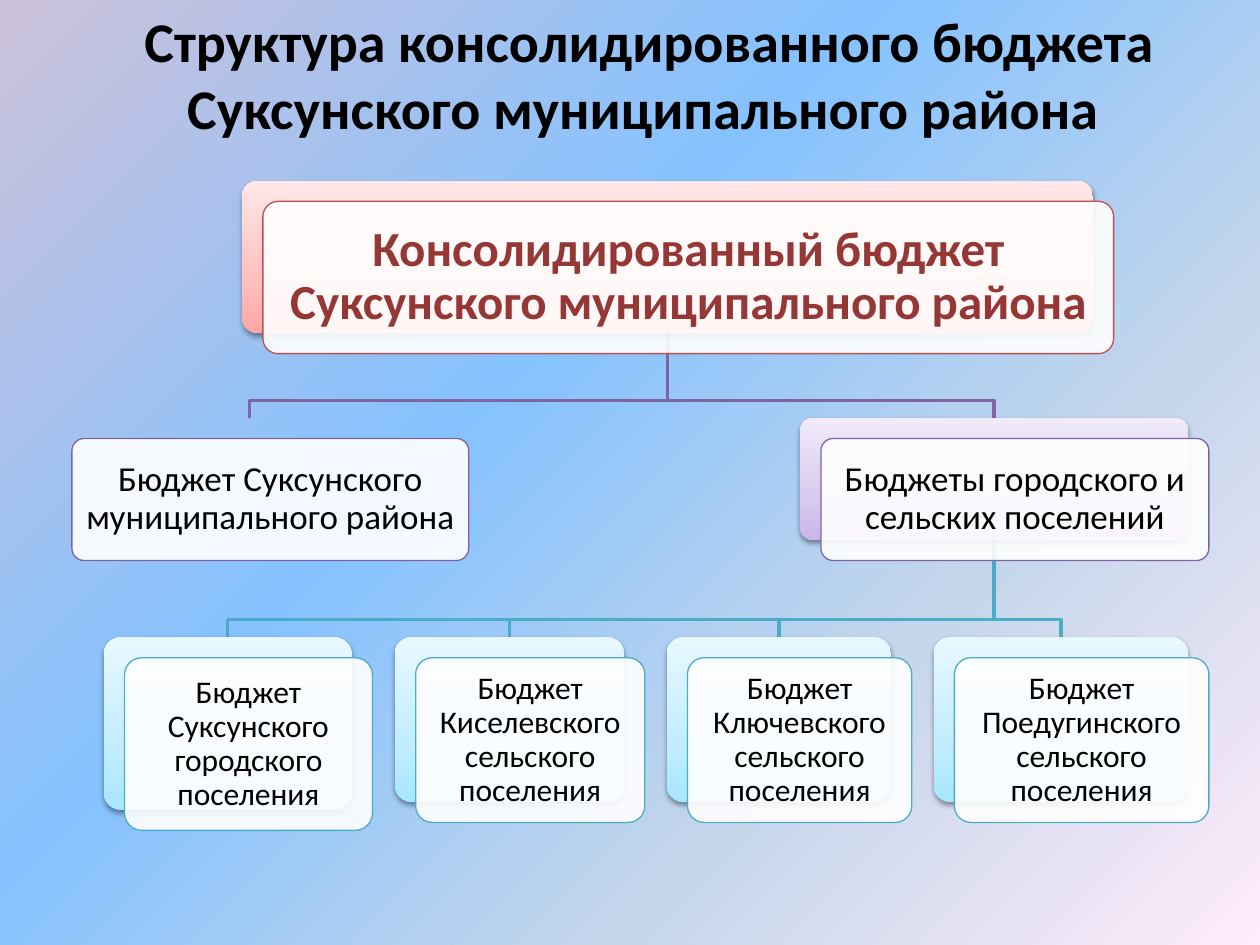
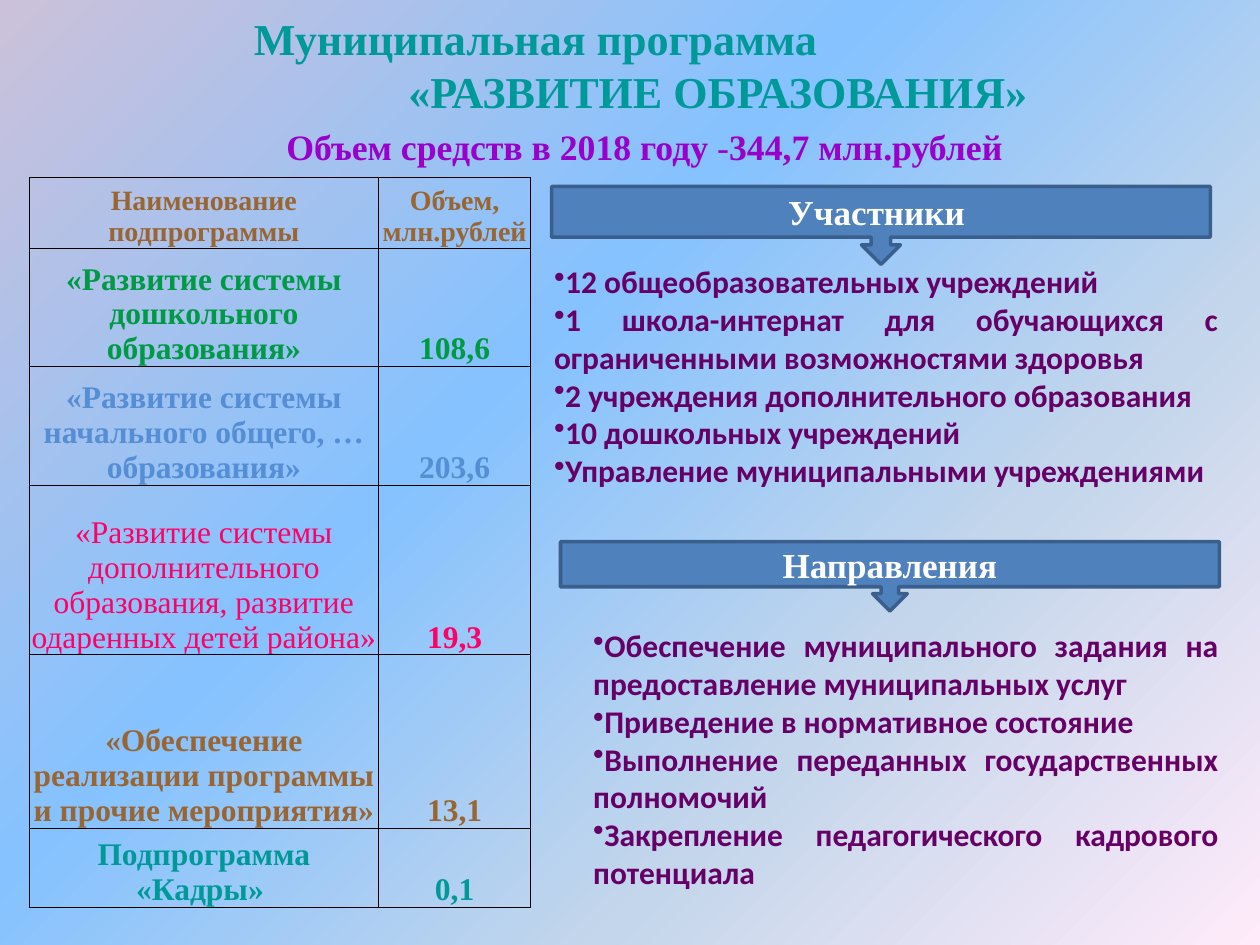
from dataclasses import dataclass

from pptx import Presentation
from pptx.dml.color import RGBColor
from pptx.enum.shapes import MSO_SHAPE as Shape
from pptx.enum.text import MSO_ANCHOR as Anchor, PP_ALIGN as Align
from pptx.oxml import parse_xml
from pptx.oxml.ns import nsdecls, qn
from pptx.util import Cm, Pt


@dataclass(frozen=True)
class Theme:
    sans: str = "Calibri"
    serif: str = "Times New Roman"
    black: str = "000000"
    white: str = "FFFFFF"
    teal: str = "009999"
    brown: str = "996633"
    violet: str = "9900CC"
    plum: str = "660066"
    maroon: str = "953735"
    callout: str = "4F81BD"
    callout_edge: str = "3A5F8C"
    heading: float = 32
    programme: float = 25.2
    volume: float = 20.4
    callout_size: float = 20
    body: float = 18
    table_head: float = 16
    backdrop: tuple = ((0, "CCC1DA"), (40, "85C2FF"), (70, "C4D6EB"), (100, "FFEBFA"))


@dataclass(frozen=True)
class Level:
    """Look of one level of the budget tree."""
    edge: str
    tint: tuple
    text: str
    size: float
    inset: float
    bold: bool = False


THEME = Theme()
ROOT = Level("C0504D", ((0, "FFA6A5"), (35, "FFC0BF"), (100, "FFE7E7")),
             THEME.maroon, 28, 0.3, True)
BRANCH = Level("8064A2", ((0, "C9B5E8"), (35, "D8CBEE"), (100, "F0EAF9")),
               THEME.black, 20, 0.2)
LEAF = Level("4BACC6", ((0, "A7E6FF"), (35, "C1EDFF"), (100, "E7F8FF")),
             THEME.black, 18, 0.18)

CARD_SHIFT = (0.42, 0.41)   # front card against the rear one, cm
BEND_ABOVE = 0.36           # bend of a branch line above its child, cm


@dataclass(frozen=True)
class Card:
    """Rear card of a tree node, in cm."""
    text: str
    left: float
    top: float
    width: float
    height: float
    has_rear: bool = True

    @property
    def middle(self):
        return self.left + self.width / 2


CONSOLIDATED = Card("Консолидированный бюджет Суксунского муниципального района",
                    4.88, 3.65, 17.15, 3.07)
DISTRICT = Card("Бюджет Суксунского муниципального района",
                1.03, 8.43, 8, 2.46, has_rear=False)
SETTLEMENTS = Card("Бюджеты городского и сельских поселений",
                   16.13, 8.43, 7.82, 2.46)
LEAVES = [Card(f"Бюджет {name} поселения", left, 12.85, width, height)
          for name, left, width, height in (
              ("Суксунского городского", 2.09, 5, 3.48),
              ("Киселевского сельского", 7.96, 4.62, 3.32),
              ("Ключевского сельского", 13.44, 4.52, 3.32),
              ("Поедугинского сельского", 18.82, 5.13, 3.32))]

SUBPROGRAMMES = (   # name, volume, colour, bold name, row height
    ("«Развитие системы дошкольного образования»", "108,6", "009A46", True, 2.39),
    ("«Развитие системы начального общего, … образования»", "203,6", "558ED5", True, 2.39),
    ("«Развитие системы дополнительного образования, развитие одаренных детей района»",
     "19,3", "FF0066", False, 3.42),
    ("«Обеспечение реализации программы и прочие мероприятия»",
     "13,1", THEME.brown, True, 3.49),
    ("Подпрограмма «Кадры» ", "0,1", THEME.teal, True, 1.6),
)
PARTICIPANTS = (
    "12 общеобразовательных учреждений ",
    "1 школа-интернат для обучающихся с ограниченными возможностями здоровья",
    "2 учреждения дополнительного образования ",
    "10 дошкольных учреждений ",
    "Управление муниципальными учреждениями",
)
DIRECTIONS = (
    "Обеспечение муниципального задания на предоставление муниципальных услуг",
    "Приведение в нормативное состояние",
    "Выполнение переданных государственных полномочий",
    "Закрепление педагогического кадрового потенциала",
)


# Shared helpers

def rgb(colour):
    return RGBColor.from_string(colour)


def set_gradient(fill, element, stops, angle):
    fill.gradient()
    gradient = element.find(".//" + qn("a:gradFill"))
    items = "".join(f'<a:gs pos="{place * 1000}"><a:srgbClr val="{colour}"/></a:gs>'
                    for place, colour in stops)
    gradient.getparent().replace(gradient, parse_xml(
        f'<a:gradFill {nsdecls("a")} rotWithShape="1"><a:gsLst>{items}</a:gsLst>'
        f'<a:lin ang="{angle * 60000}" scaled="0"/></a:gradFill>'))


def style(paragraph, font, size, colour, bold=True, align=Align.CENTER):
    paragraph.alignment = align
    paragraph.font.name = font
    paragraph.font.size = Pt(size)
    paragraph.font.bold = bold
    paragraph.font.color.rgb = rgb(colour)


def add_slide(deck):
    slide = deck.slides.add_slide(deck.slide_layouts[6])
    set_gradient(slide.background.fill, slide._element, THEME.backdrop, 45)
    return slide


def add_text(slide, box, lines, *look, **options):
    frame = slide.shapes.add_textbox(*map(Cm, box)).text_frame
    frame.word_wrap = True
    frame.text = "\n".join(lines)
    for paragraph in frame.paragraphs:
        style(paragraph, *look, **options)
    return frame


# Budget tree

def add_branch(slide, parent, child, colour):
    bend = child.top - BEND_ABOVE
    builder = slide.shapes.build_freeform(
        Cm(parent.middle), Cm(parent.top + parent.height))
    builder.add_line_segments(
        [(Cm(x), Cm(y)) for x, y in ((parent.middle, bend), (child.middle, bend),
                                     (child.middle, child.top))], close=False)
    line = builder.convert_to_shape()
    line.shadow.inherit = False
    line.fill.background()
    line.line.color.rgb = rgb(colour)
    line.line.width = Pt(2)


def add_rounded(slide, left, top, card):
    panel = slide.shapes.add_shape(Shape.ROUNDED_RECTANGLE, Cm(left), Cm(top),
                                   Cm(card.width), Cm(card.height))
    panel.adjustments[0] = 0.1
    panel.shadow.inherit = False
    return panel


def add_card(slide, card, level):
    if card.has_rear:
        rear = add_rounded(slide, card.left, card.top, card)
        set_gradient(rear.fill, rear._element, level.tint, 270)
        rear.line.fill.background()
        rear._element.spPr.find(qn("a:effectLst")).append(parse_xml(
            f'<a:outerShdw {nsdecls("a")} blurRad="{Pt(3.1)}" dist="{Pt(1.6)}" '
            'dir="5400000" rotWithShape="0"><a:srgbClr val="000000">'
            '<a:alpha val="38000"/></a:srgbClr></a:outerShdw>'))

    front = add_rounded(slide, card.left + CARD_SHIFT[0], card.top + CARD_SHIFT[1], card)
    front.fill.solid()
    front.fill.fore_color.rgb = rgb(THEME.white)
    front._element.spPr.find(qn("a:solidFill"))[0].append(
        parse_xml(f'<a:alpha {nsdecls("a")} val="90000"/>'))
    front.line.color.rgb = rgb(level.edge)
    front.line.width = Pt(0.75)
    frame = front.text_frame
    frame.word_wrap = True
    frame.vertical_anchor = Anchor.MIDDLE
    frame.margin_left = frame.margin_right = Cm(level.inset)
    frame.margin_top = frame.margin_bottom = Cm(level.inset)
    frame.text = card.text
    style(frame.paragraphs[0], THEME.sans, level.size, level.text, level.bold)
    frame.paragraphs[0].line_spacing = 0.9


def build_structure(deck):
    slide = add_slide(deck)
    for leaf in reversed(LEAVES):
        add_branch(slide, SETTLEMENTS, leaf, LEAF.edge)
    for branch in (SETTLEMENTS, DISTRICT):
        add_branch(slide, CONSOLIDATED, branch, BRANCH.edge)
    add_card(slide, CONSOLIDATED, ROOT)
    for branch in (DISTRICT, SETTLEMENTS):
        add_card(slide, branch, BRANCH)
    for leaf in LEAVES:
        add_card(slide, leaf, LEAF)
    add_text(slide, (1.5, 0, 23.19, 3),
             ["Структура консолидированного бюджета Суксунского муниципального района "],
             THEME.sans, THEME.heading, THEME.black)


# Education programme

def fill_cell(cell, text, size, colour, bold=True):
    cell.text = text
    cell.vertical_anchor = Anchor.BOTTOM
    cell.margin_left = cell.margin_right = cell.margin_top = Cm(0.02)
    cell.margin_bottom = 0
    cell.fill.background()
    style(cell.text_frame.paragraphs[0], THEME.serif, size, colour, bold)
    properties = cell._tc.get_or_add_tcPr()
    for place, side in enumerate(("lnL", "lnR", "lnT", "lnB")):
        properties.insert(place, parse_xml(
            f'<a:{side} {nsdecls("a")} w="{Pt(0.5)}"><a:solidFill>'
            f'<a:srgbClr val="{THEME.black}"/></a:solidFill></a:{side}>'))


def add_subprogrammes(slide):
    heights = [1.42] + [row[-1] for row in SUBPROGRAMMES]
    table = slide.shapes.add_table(len(heights), 2, Cm(0.59), Cm(3.58),
                                   Cm(10.11), Cm(sum(heights))).table
    table.first_row = table.horz_banding = False
    for column, width in zip(table.columns, (7.04, 3.07)):
        column.width = Cm(width)
    for row, height in zip(table.rows, heights):
        row.height = Cm(height)
    for column, title in enumerate(("Наименование подпрограммы", "Объем, млн.рублей")):
        fill_cell(table.cell(0, column), title, THEME.table_head, THEME.brown)
    for row, (name, volume, colour, bold, _) in enumerate(SUBPROGRAMMES, 1):
        fill_cell(table.cell(row, 0), name, THEME.body, colour, bold)
        fill_cell(table.cell(row, 1), volume, THEME.body, colour)


def add_callout(slide, box, title):
    callout = slide.shapes.add_shape(Shape.DOWN_ARROW_CALLOUT, *map(Cm, box))
    callout.shadow.inherit = False
    callout.fill.solid()
    callout.fill.fore_color.rgb = rgb(THEME.callout)
    callout.line.color.rgb = rgb(THEME.callout_edge)
    callout.line.width = Pt(2)
    callout.text_frame.text = title
    callout.text_frame.vertical_anchor = Anchor.MIDDLE
    style(callout.text_frame.paragraphs[0], THEME.serif, THEME.callout_size, THEME.white)


def add_bullets(slide, box, items):
    frame = add_text(slide, box, items, THEME.sans, THEME.body, THEME.plum,
                     align=Align.JUSTIFY)
    for paragraph in frame.paragraphs:
        properties = paragraph._p.get_or_add_pPr()
        bullet = parse_xml(f'<a:buChar {nsdecls("a")} char="•"/>')
        properties.insert_element_before(bullet, "a:tabLst", "a:defRPr", "a:extLst")


def build_education(deck):
    slide = add_slide(deck)
    # Title and total volume
    title = add_text(slide, (3.96, 0.41, 21.03, 1.78),
                     ["Муниципальная программа", "«РАЗВИТИЕ ОБРАЗОВАНИЯ»"],
                     THEME.serif, THEME.programme, THEME.teal)
    title.vertical_anchor = Anchor.MIDDLE
    for paragraph in title.paragraphs:
        paragraph.line_spacing = Pt(30)
    opening = title.paragraphs[0]
    opening.alignment = Align.LEFT
    opening._p.get_or_add_pPr().set("marL", str(Cm(0.91)))

    volume = add_text(slide, (0.58, 2.39, 24.82, 1), [""],
                      THEME.serif, THEME.volume, THEME.violet).paragraphs[0]
    volume.space_before = Pt(2)
    for text, bold in (("Объем средств в 2018 году ", True), ("-", False),
                       ("344,7 млн.рублей", True)):
        run = volume.add_run()
        run.text = text
        run.font.bold = bold

    # Subprogrammes on the left, participants and directions on the right
    add_subprogrammes(slide)
    add_callout(slide, (11.12, 3.76, 13.28, 1.57), "Участники ")
    add_bullets(slide, (10.92, 5.16, 13.89, 5.64), PARTICIPANTS)
    add_callout(slide, (11.3, 10.92, 13.28, 1.4), "Направления")
    add_bullets(slide, (11.71, 12.5, 13.11, 6.4), DIRECTIONS)


def main():
    deck = Presentation()
    deck.slide_width, deck.slide_height = Cm(25.4), Cm(19.05)
    build_structure(deck)
    build_education(deck)
    deck.save("out.pptx")


if __name__ == "__main__":
    main()
